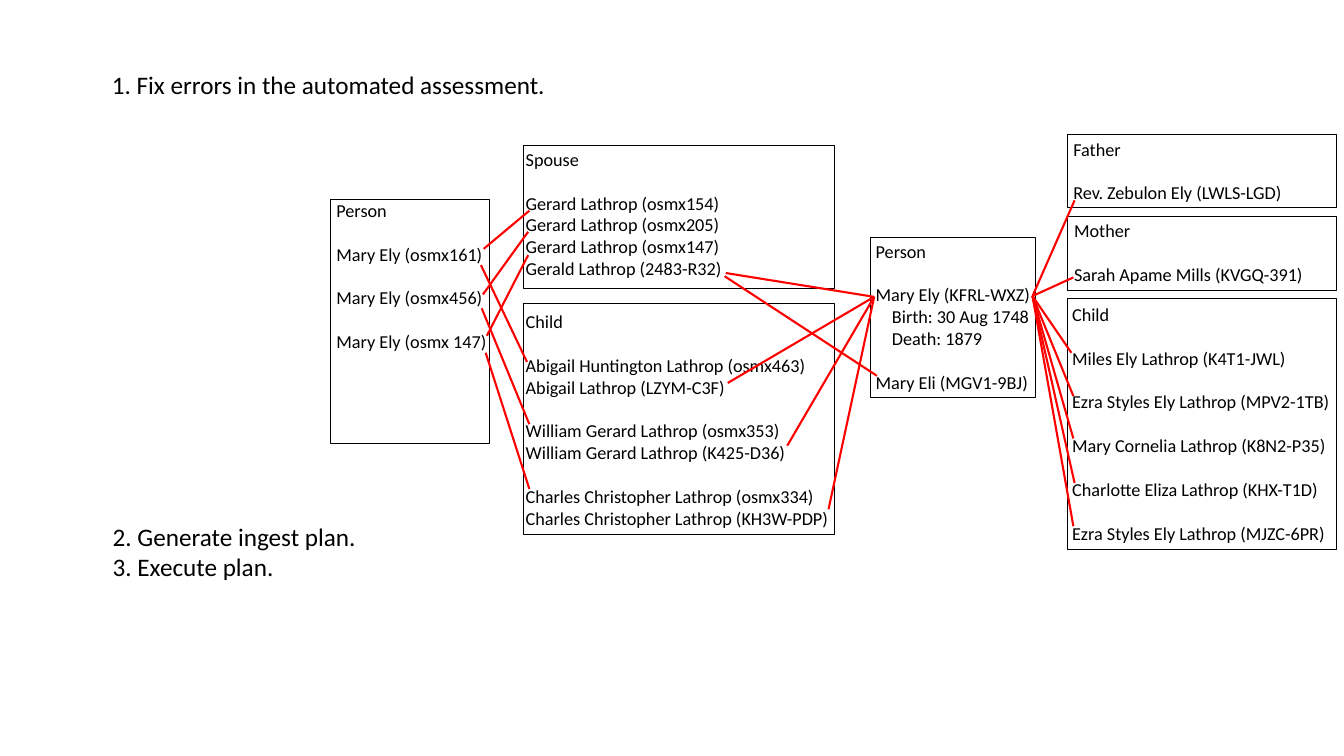
import pptx
import pptx.util
import pptx.dml.color
import pptx.enum.shapes
import pptx.enum.text

Cm, Pt = pptx.util.Cm, pptx.util.Pt

COLOURS = {"text": "000000", "frame": "000000", "link": "FF0000"}
FONT = "Calibri"
STEP_SIZE, RECORD_SIZE = 18, 13
LINE_GAP = RECORD_SIZE * 1.2
DETAIL_INDENT = Cm(0.41)

# Steps: place (left, top, width, height in cm), lines
STEPS = [
    ((2.57, 1.63, 11.56, 1.02), ["1. Fix errors in the automated assessment."]),
    ((2.59, 13, 6.71, 1.8), ["2. Generate ingest plan.", "3. Execute plan."]),
]

# Records: frame, text place, heading, blocks set apart by one line.
# Within a block, a line that starts with ">" is an indented detail.
RECORDS = [
    ((13.18, 7.65, 7.85, 5.82), (13, 7.7, 8.28, 5.82), "Child", [
        ["Abigail Huntington Lathrop (osmx463)", "Abigail Lathrop (LZYM-C3F)"],
        ["William Gerard Lathrop (osmx353)", "William Gerard Lathrop (K425-D36)"],
        ["Charles Christopher Lathrop (osmx334)",
         "Charles Christopher Lathrop (KH3W-PDP)"],
    ]),
    ((8.33, 5.03, 4.01, 6.15), (8.23, 4.9, 4.34, 4.14), "Person", [
        ["Mary Ely (osmx161)"], ["Mary Ely (osmx456)"], ["Mary Ely (osmx 147)"],
    ]),
    ((21.92, 5.99, 4.17, 4.01), (21.82, 5.92, 4.45, 4.14), "Person", [
        ["Mary Ely (KFRL-WXZ)", ">Birth: 30 Aug 1748", ">Death: 1879"],
        ["Mary Eli (MGV1-9BJ)"],
    ]),
    ((26.9, 7.52, 6.78, 6.32), (26.77, 7.52, 7.11, 6.38), "Child", [
        ["Miles Ely Lathrop (K4T1-JWL)"],
        ["Ezra Styles Ely Lathrop (MPV2-1TB)"],
        ["Mary Cornelia Lathrop (K8N2-P35)"],
        ["Charlotte Eliza Lathrop (KHX-T1D)"],
        ["Ezra Styles Ely Lathrop (MJZC-6PR)"],
    ]),
    ((26.9, 5.46, 6.78, 1.85), (26.82, 5.41, 6.35, 1.93), "Mother", [
        ["Sarah Apame Mills (KVGQ-391)"],
    ]),
    ((26.9, 3.38, 6.78, 1.85), (26.8, 3.35, 5.84, 1.93), "Father", [
        ["Rev. Zebulon Ely (LWLS-LGD)"],
    ]),
    ((13.18, 3.66, 7.85, 3.61), (13, 3.61, 5.92, 3.58), "Spouse", [
        ["Gerard Lathrop (osmx154)", "Gerard Lathrop (osmx205)",
         "Gerard Lathrop (osmx147)", "Gerald Lathrop (2483-R32)"],
    ]),
]

# Links: one start point and all the points it leads to, in cm
LINKS = [
    ((12.19, 6.27), [(13.34, 5.31)]),
    ((12.12, 6.68), [(13.28, 9.12)]),
    ((12.17, 7.42), [(13.31, 5.84)]),
    ((12.14, 7.77), [(13.34, 10.69)]),
    ((12.27, 8.46), [(13.31, 6.43)]),
    ((12.24, 8.89), [(13.34, 12.32)]),
    ((22.03, 7.48), [(18.29, 6.88), (18.34, 9.65), (19.84, 11.23), (20.88, 12.83)]),
    ((22.1, 9.47), [(18.26, 6.96)]),
    ((26.02, 7.46), [(27.08, 5.05), (27.05, 6.99), (27, 8.89), (27.05, 9.98),
                     (27.05, 11.05), (27.08, 12.17), (27.05, 13.26)]),
]


def colour(name):
    return pptx.dml.color.RGBColor.from_string(COLOURS[name])


def lengths(place):
    return [Cm(value) for value in place]


def add_lines(shapes, place, lines, size):
    """Add a text box; lines are (text, space before in points, indent)."""
    frame = shapes.add_textbox(*lengths(place)).text_frame
    frame.word_wrap = False
    frame.auto_size = pptx.enum.text.MSO_AUTO_SIZE.SHAPE_TO_FIT_TEXT
    for index, (text, gap, indent) in enumerate(lines):
        paragraph = frame.paragraphs[0] if index == 0 else frame.add_paragraph()
        if gap:
            paragraph.space_before = Pt(gap)
        if indent:
            paragraph._p.get_or_add_pPr().set("marL", str(int(indent)))
        run = paragraph.add_run()
        run.text = text
        for key, value in {"name": FONT, "size": Pt(size)}.items():
            setattr(run.font, key, value)
        run.font.color.rgb = colour("text")


def record_lines(heading, blocks):
    """Lay out the heading and blocks as lines with a gap before each block."""
    lines = [(heading, 0, 0)]
    for block in blocks:
        for index, text in enumerate(block):
            lines.append((text.lstrip(">"), 0 if index else LINE_GAP,
                          DETAIL_INDENT if text.startswith(">") else 0))
    return lines


def add_record(slide, frame_place, text_place, heading, blocks):
    shapes = slide.shapes.add_group_shape().shapes
    frame = shapes.add_shape(pptx.enum.shapes.MSO_SHAPE.RECTANGLE,
                             *lengths(frame_place))
    frame.shadow.inherit = False
    frame.fill.background()
    frame.line.color.rgb = colour("frame")
    frame.line.width = Pt(0.25)
    add_lines(shapes, text_place, record_lines(heading, blocks), RECORD_SIZE)


def add_link(slide, start, end):
    link = slide.shapes.add_connector(pptx.enum.shapes.MSO_CONNECTOR.STRAIGHT,
                                      *lengths(start + end))
    link.line.color.rgb = colour("link")
    link.line.width = Pt(1.5)
    properties = link._element.spPr
    properties.append(properties.makeelement(
        "{http://schemas.openxmlformats.org/drawingml/2006/main}effectLst", {}))


def main():
    deck = pptx.Presentation()
    deck.slide_width, deck.slide_height = Cm(33.87), Cm(19.05)
    slide = deck.slides.add_slide(deck.slide_layouts[6])
    for place, texts in STEPS:
        add_lines(slide.shapes, place, [(text, 0, 0) for text in texts], STEP_SIZE)
    for record in RECORDS:
        add_record(slide, *record)
    for start, ends in LINKS:
        for end in ends:
            add_link(slide, start, end)
    deck.save("out.pptx")


if __name__ == "__main__":
    main()
